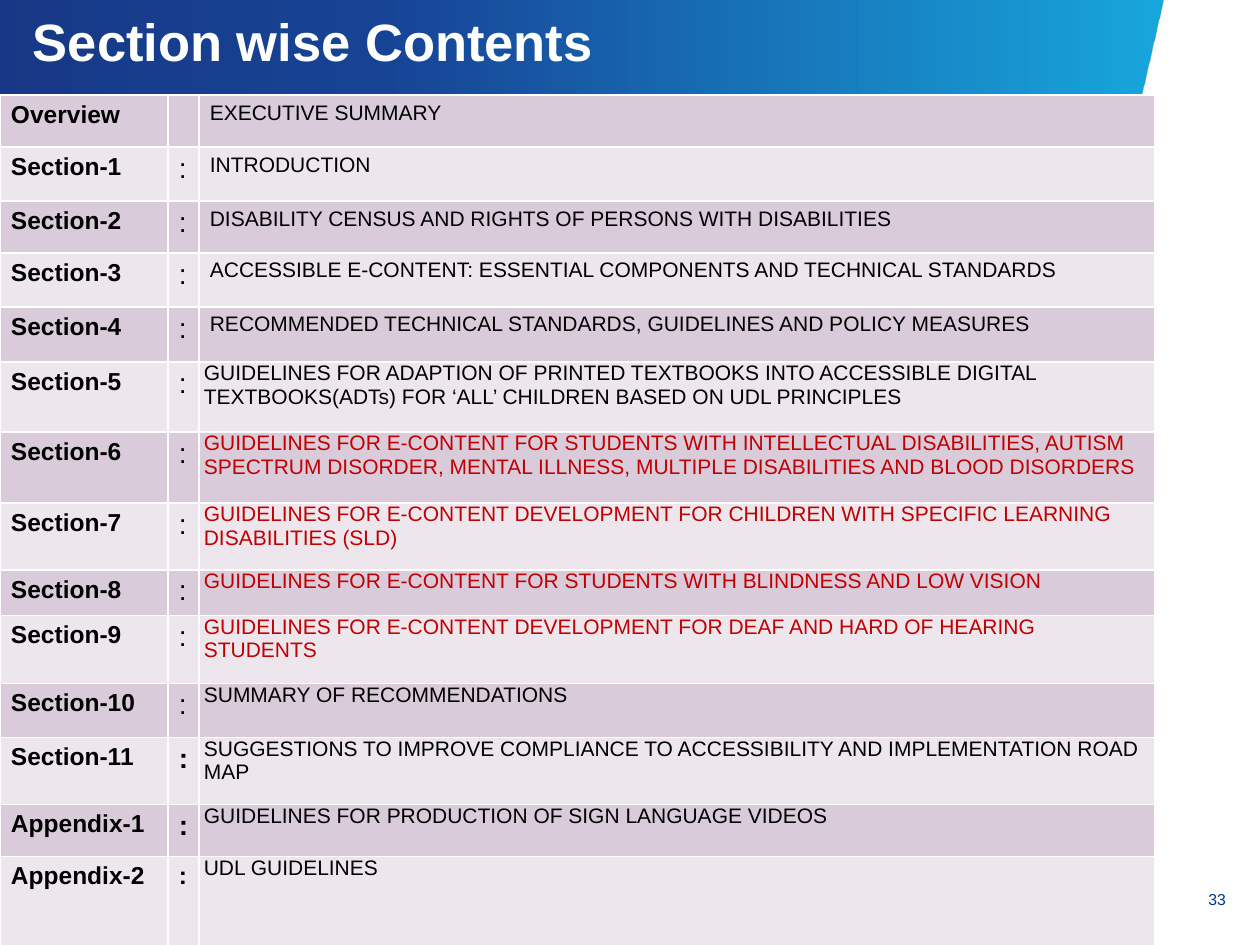
from lxml import etree
from pptx import Presentation
from pptx import util as u
from pptx.dml.color import RGBColor
from pptx.enum import text
from pptx.oxml import parse_xml
from pptx.oxml.ns import nsdecls, qn

PX = 914400 / 126
RED = "C00000"
BLACK = "000000"
BANDS = ("DACBDA", "EDE7ED")
COLUMN_WIDTHS = (168, 31, 956)
WIDE_INSETS = (11, 6, 11, 6)
TIGHT_INSETS = (5, 0, 5, 0)

# label, separator size, separator bold, entry, entry colour, entry insets, row height
CONTENTS = [
    ("Overview", 16, False, "EXECUTIVE SUMMARY", BLACK, WIDE_INSETS, 52),
    ("Section-1", 16, False, "INTRODUCTION", BLACK, WIDE_INSETS, 54),
    ("Section-2", 16, False, "DISABILITY CENSUS AND RIGHTS OF PERSONS WITH DISABILITIES",
     BLACK, WIDE_INSETS, 52),
    ("Section-3", 16, False, "ACCESSIBLE E-CONTENT: ESSENTIAL COMPONENTS AND TECHNICAL STANDARDS",
     BLACK, WIDE_INSETS, 54),
    ("Section-4", 16, False, "RECOMMENDED TECHNICAL STANDARDS, GUIDELINES AND POLICY MEASURES",
     BLACK, WIDE_INSETS, 55),
    ("Section-5", 16, False, "GUIDELINES FOR ADAPTION OF PRINTED TEXTBOOKS INTO ACCESSIBLE DIGITAL "
     "TEXTBOOKS(ADTs) FOR ‘ALL’ CHILDREN BASED ON UDL PRINCIPLES", BLACK, TIGHT_INSETS, 70),
    ("Section-6", 16, False, "GUIDELINES FOR E-CONTENT FOR STUDENTS WITH INTELLECTUAL DISABILITIES, "
     "AUTISM SPECTRUM DISORDER, MENTAL ILLNESS, MULTIPLE DISABILITIES AND BLOOD DISORDERS",
     RED, TIGHT_INSETS, 71),
    ("Section-7", 16, False, "GUIDELINES FOR E-CONTENT DEVELOPMENT FOR CHILDREN WITH SPECIFIC "
     "LEARNING DISABILITIES (SLD)", RED, TIGHT_INSETS, 67),
    ("Section-8", 16, False, "GUIDELINES FOR E-CONTENT FOR STUDENTS WITH BLINDNESS AND LOW VISION",
     RED, TIGHT_INSETS, 43),
    ("Section-9", 16, False, "GUIDELINES FOR E-CONTENT DEVELOPMENT FOR DEAF AND HARD OF HEARING "
     "STUDENTS", RED, TIGHT_INSETS, 68),
    ("Section-10", 16, False, "SUMMARY OF RECOMMENDATIONS", BLACK, TIGHT_INSETS, 54),
    ("Section-11", 16, True, "SUGGESTIONS TO IMPROVE COMPLIANCE TO ACCESSIBILITY AND "
     "IMPLEMENTATION ROAD MAP", BLACK, TIGHT_INSETS, 67),
    ("Appendix-1", 16, True, "GUIDELINES FOR PRODUCTION OF SIGN LANGUAGE VIDEOS",
     BLACK, TIGHT_INSETS, 52),
    ("Appendix-2", 14, True, "UDL GUIDELINES", BLACK, TIGHT_INSETS, 91),
]


def px(length):
    return u.Emu(round(length * PX))


def color(value):
    return RGBColor.from_string(value)


def set_insets(target, insets):
    """Set left, top, right and bottom margins of a cell or text frame."""
    for side, inset in zip(("left", "top", "right", "bottom"), insets):
        setattr(target, f"margin_{side}", px(inset))


def write(text_frame, wording, size, font_color, bold=False):
    text_frame.text = wording
    paragraph = text_frame.paragraphs[0]
    for item in (paragraph, *paragraph.runs):
        item.font.name = "Arial"
        item.font.size = u.Pt(size)
        item.font.bold = bold
        item.font.color.rgb = color(font_color)
    return paragraph


def add_text(slide, box, wording, size, font_color, bold=False, insets=(0, 0, 0, 0)):
    shape = slide.shapes.add_textbox(*map(px, box))
    text_frame = shape.text_frame
    text_frame.word_wrap = True
    set_insets(text_frame, insets)
    write(text_frame, wording, size, font_color, bold)
    return text_frame


def add_header(slide, left, top, width, height):
    """Slanted gradient banner with the slide title."""
    slant = 31
    builder = slide.shapes.build_freeform(px(left + width), px(top))
    builder.add_line_segments([
        (px(left), px(top)),
        (px(left), px(top + height)),
        (px(left + width - slant), px(top + height)),
    ], close=True)
    banner = builder.convert_to_shape()
    banner.shadow.inherit = False
    banner.line.fill.background()
    stops = "".join(
        f'<a:gs pos="{position}000"><a:srgbClr val="{value}"><a:alpha val="90000"/></a:srgbClr></a:gs>'
        for position, value in ((0, "00257A"), (35, "00338D"), (100, "009FDA")))
    gradient = parse_xml(f'<a:gradFill {nsdecls("a")} rotWithShape="1"><a:gsLst>{stops}</a:gsLst>'
                         '<a:lin ang="0" scaled="0"/></a:gradFill>')
    banner._element.spPr.find(qn("a:custGeom")).addnext(gradient)

    title = add_text(slide, (left + 33, top + 13, width - 33, 54),
                     "Section wise Contents", 30, "FFFFFF", bold=True)
    title.vertical_anchor = text.MSO_ANCHOR.MIDDLE


def add_borders(cell, line_color):
    properties = cell._tc.get_or_add_tcPr()
    for index, side in enumerate(("lnL", "lnR", "lnT", "lnB")):
        line = etree.Element(qn(f"a:{side}"), w=str(u.Pt(1)))
        fill = etree.SubElement(line, qn("a:solidFill"))
        etree.SubElement(fill, qn("a:srgbClr"), val=line_color)
        properties.insert(index, line)


def add_contents(slide, left, top):
    """Table of section labels, separators and entries."""
    height = sum(row[-1] for row in CONTENTS)
    frame = slide.shapes.add_table(len(CONTENTS), len(COLUMN_WIDTHS), px(left), px(top),
                                   px(sum(COLUMN_WIDTHS)), px(height))
    table = frame.table
    table.first_row = False
    table.horz_banding = False
    for column, width in zip(table.columns, COLUMN_WIDTHS):
        column.width = px(width)

    for index, (label, separator_size, separator_bold, entry, entry_color, insets,
                row_height) in enumerate(CONTENTS):
        row = table.rows[index]
        row.height = px(row_height)
        cells = (
            (label, 14, BLACK, True, WIDE_INSETS),
            (":" if index else "", separator_size, BLACK, separator_bold, WIDE_INSETS),
            (entry, 12, entry_color, False, insets),
        )
        for cell, (wording, size, font_color, bold, cell_insets) in zip(row.cells, cells):
            cell.fill.solid()
            cell.fill.fore_color.rgb = color(BANDS[index % 2])
            add_borders(cell, "FFFFFF")
            set_insets(cell, cell_insets)
            write(cell.text_frame, wording, size, font_color, bold)


def add_page_number(slide, left, top, width, height):
    number = add_text(slide, (left, top, width, height), "33", 9, "00338D",
                      insets=(10, 10, 0, 0))
    number.paragraphs[0].alignment = text.PP_ALIGN.RIGHT


def main():
    presentation = Presentation()
    presentation.slide_width = px(1260)
    presentation.slide_height = px(945)
    slide = presentation.slides.add_slide(presentation.slide_layouts[6])
    add_header(slide, 0, 0, 1163, 134)
    add_page_number(slide, 1162, 880, 64, 39)
    add_contents(slide, 0, 95)
    presentation.save("out.pptx")


if __name__ == "__main__":
    main()
